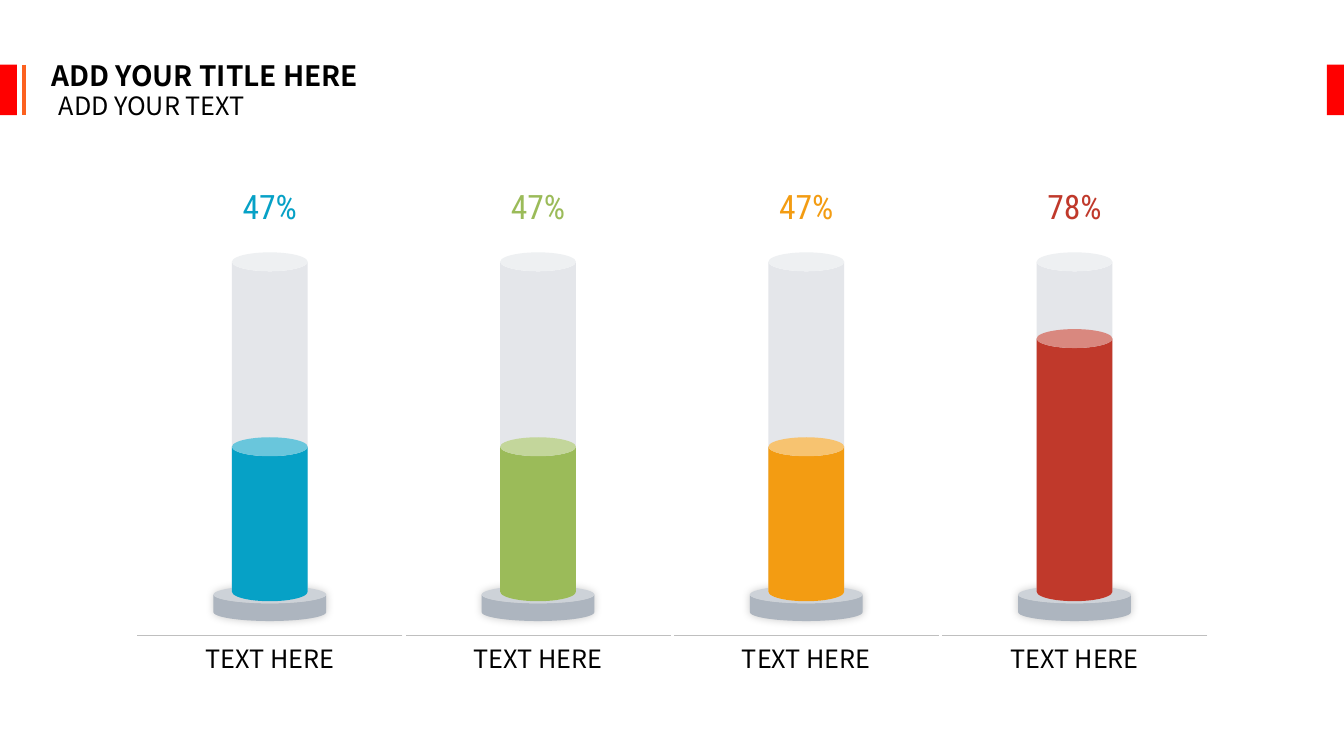
from lxml.etree import SubElement
from pptx import Presentation
from pptx.dml.color import RGBColor
from pptx.enum.shapes import MSO_CONNECTOR, MSO_SHAPE
from pptx.enum.text import MSO_ANCHOR, MSO_AUTO_SIZE, PP_ALIGN
from pptx.oxml.ns import qn
from pptx.util import Cm, Pt

BLACK = RGBColor(0x00, 0x00, 0x00)
RED = RGBColor(0xFF, 0x00, 0x00)
ORANGE = RGBColor(0xFC, 0x61, 0x1F)
BASE_GREY = RGBColor(0xAD, 0xB5, 0xBF)
TUBE_GREY = RGBColor(0xE4, 0xE6, 0xEA)
RULE_GREY = RGBColor(0xBF, 0xBF, 0xBF)
BLUE = RGBColor(0x06, 0xA1, 0xC6)
GREEN = RGBColor(0x9B, 0xBB, 0x59)
AMBER = RGBColor(0xF3, 0x9C, 0x12)
BRICK = RGBColor(0xC0, 0x39, 0x2B)

HEADING_FONT = "Noto Sans CJK SC"
NUMBER_FONT = "Roboto Condensed"
PAGE_WIDTH = 33.87
PAGE_HEIGHT = 19.05

TUBES = [(47, BLUE), (47, GREEN), (47, AMBER), (78, BRICK)]
TUBE_LABEL = "TEXT HERE"
COLUMN_PITCH = 6.76
COLUMN_BOX = (3.46, 4.76, 6.68, 12.36)
HEADER_BOX = (0, 1.63, PAGE_WIDTH, 1.27)

NO_INSETS = {"margin_left": 0, "margin_right": 0, "margin_top": 0, "margin_bottom": 0}
GROWING = {"auto_size": MSO_AUTO_SIZE.SHAPE_TO_FIT_TEXT}


def add_solid(group, kind, box, color):
    shape = group.shapes.add_shape(kind, *map(Cm, box))
    shape.shadow.inherit = False
    shape.fill.solid()
    shape.fill.fore_color.rgb = color
    shape.line.fill.background()
    return shape


def add_line(group, start, end, color, weight):
    line = group.shapes.add_connector(MSO_CONNECTOR.STRAIGHT, *map(Cm, start + end))
    line.line.color.rgb = color
    line.line.width = Pt(weight)
    SubElement(line._element.spPr, qn("a:effectLst"))


def add_text(group, box, text, color, font_format, frame_format, alignment=PP_ALIGN.CENTER):
    frame = group.shapes.add_textbox(*map(Cm, box)).text_frame
    frame.word_wrap = False
    for name, value in frame_format.items():
        setattr(frame, name, value)
    para = frame.paragraphs[0]
    para.alignment = alignment
    span = para.add_run()
    span.text = text
    span.font.color.rgb = color
    for name, value in font_format.items():
        setattr(span.font, name, value)


def add_soft_shadow(shape):
    effects = shape._element.spPr.find(qn("a:effectLst"))
    shadow = SubElement(effects, qn("a:outerShdw"), blurRad=str(Pt(6)), dist="0",
                        dir=str(225 * 60000), algn="ctr", rotWithShape="0")
    color = SubElement(shadow, qn("a:srgbClr"), val=str(BLACK))
    SubElement(color, qn("a:alpha"), val="20000")


def add_header(page, box):
    left, top, width, height = box
    group = page.shapes.add_group_shape()
    marker = 0.43
    for marker_left in (left, left + width - marker):
        add_solid(group, MSO_SHAPE.RECTANGLE, (marker_left, top, marker, height), RED)
    add_line(group, (left + 0.61, top), (left + 0.61, top + height), ORANGE, 3)
    add_text(group, (left + 0.83, top - 0.28, 8.66, 1.12), "ADD YOUR TITLE HERE", BLACK,
             {"name": HEADING_FONT, "size": Pt(20), "bold": True}, GROWING)
    add_text(group, (left + 1.23, top + 0.52, 5.69, 1.02), "ADD YOUR TEXT", BLACK,
             {"name": HEADING_FONT, "size": Pt(18)}, GROWING, PP_ALIGN.LEFT)


def add_tube(page, box, percent, color):
    left, top, width, height = box
    center = left + width / 2
    group = page.shapes.add_group_shape()

    base_width = 2.84
    base = add_solid(group, MSO_SHAPE.CAN,
                     (center - base_width / 2, top + 10, base_width, 0.89), BASE_GREY)
    base.adjustments[0] = 0.5
    add_soft_shadow(base)

    tube_width, tube_height = 1.91, 8.79
    tube_bottom = top + 10.39
    for share, tone in ((1, TUBE_GREY), (percent / 100, color)):
        level = tube_height * share
        add_solid(group, MSO_SHAPE.CAN,
                  (center - tube_width / 2, tube_bottom - level, tube_width, level), tone)

    number_width = 1.8
    add_text(group, (center - number_width / 2, top, number_width, 0.89), f"{percent}%", color,
             {"name": NUMBER_FONT, "size": Pt(24)},
             {**NO_INSETS, "vertical_anchor": MSO_ANCHOR.MIDDLE})
    rule_top = top + 11.25
    add_line(group, (left + width, rule_top), (left, rule_top), RULE_GREY, 0.25)
    add_text(group, (left, top + 11.45, width, height - 11.45), TUBE_LABEL, BLACK,
             {"name": HEADING_FONT, "size": Pt(18)}, NO_INSETS)


def main():
    deck = Presentation()
    deck.slide_width = Cm(PAGE_WIDTH)
    deck.slide_height = Cm(PAGE_HEIGHT)
    page = deck.slides.add_slide(deck.slide_layouts[6])
    left, *rest = COLUMN_BOX
    for index, (percent, color) in enumerate(TUBES):
        add_tube(page, (left + index * COLUMN_PITCH, *rest), percent, color)
    add_header(page, HEADER_BOX)
    deck.save("out.pptx")


if __name__ == "__main__":
    main()
